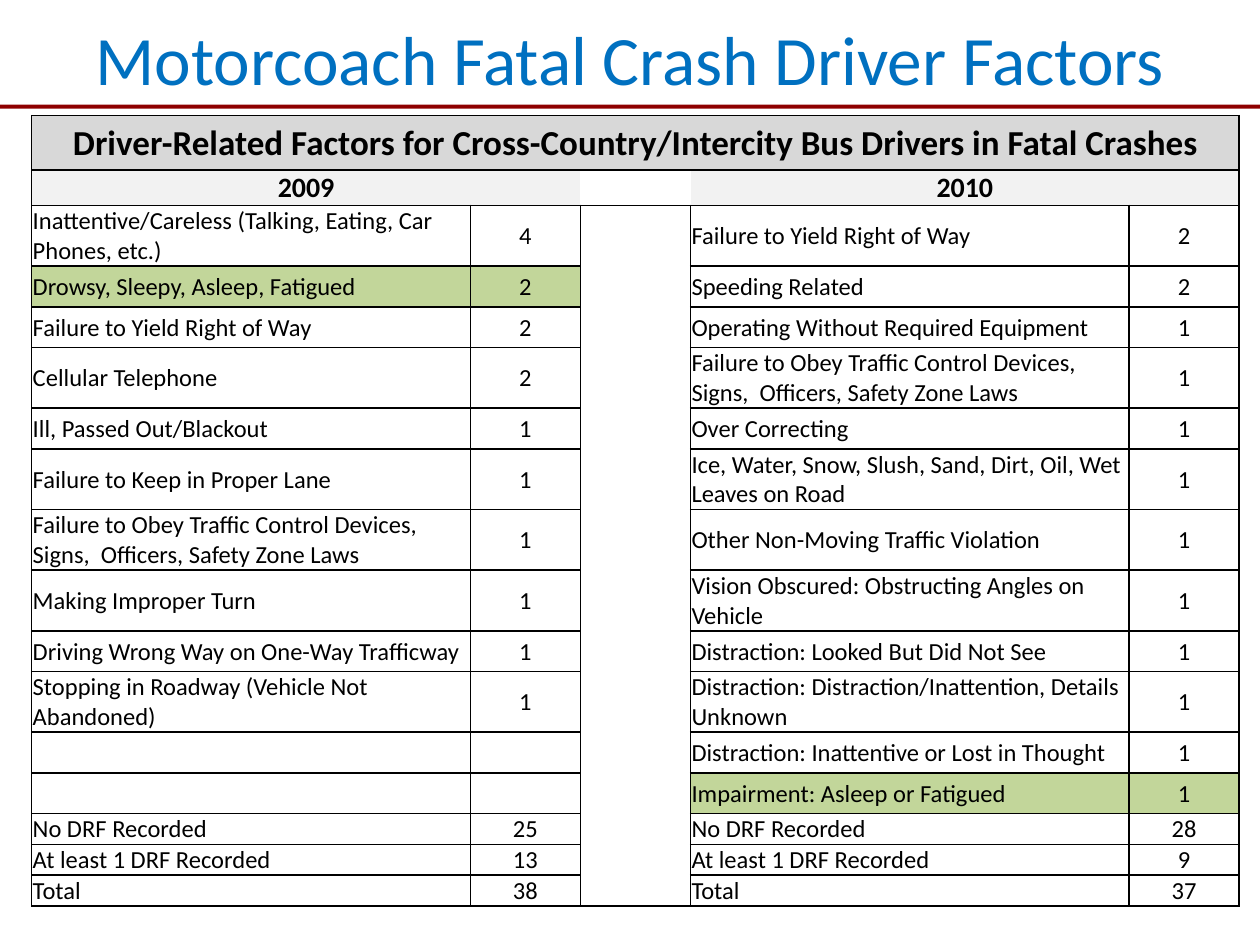
import pptx
import pptx.dml.color
import pptx.enum.shapes
import pptx.enum.text
import pptx.oxml
import pptx.oxml.ns
import pptx.util
import lxml.etree

Cm = pptx.util.Cm
ALIGN = pptx.enum.text.PP_ALIGN
ANCHOR = pptx.enum.text.MSO_ANCHOR

COLOURS = {
    "title": "0070C0",
    "rule": "8E0000",
    "text": "000000",
    "border": "000000",
    "heading": "D8D8D8",
    "year": "F2F2F2",
    "fatigue": "C2D69A",
}

HEADING = "Driver-Related Factors for Cross-Country/Intercity Bus Drivers in Fatal Crashes"
CONTROL_DEVICES = "Failure to Obey Traffic Control Devices,  Signs,  Officers, Safety Zone Laws"
TALL, MEDIUM, SHORT = 1.2, 0.82, 0.61
COLUMN_WIDTHS = [8.84, 2.22, 2.22, 8.84, 2.22]
GAP_COLUMN = 2
FACTORS = [
    (TALL, "Inattentive/Careless (Talking, Eating, Car Phones, etc.)", 4,
     "Failure to Yield Right of Way", 2),
    (MEDIUM, "Drowsy, Sleepy, Asleep, Fatigued", 2, "Speeding Related", 2),
    (MEDIUM, "Failure to Yield Right of Way", 2, "Operating Without Required Equipment", 1),
    (TALL, "Cellular Telephone", 2, CONTROL_DEVICES, 1),
    (MEDIUM, "Ill, Passed Out/Blackout", 1, "Over Correcting", 1),
    (TALL, "Failure to Keep in Proper Lane", 1,
     "Ice, Water, Snow, Slush, Sand, Dirt, Oil, Wet Leaves on Road", 1),
    (TALL, CONTROL_DEVICES, 1, "Other Non-Moving Traffic Violation", 1),
    (TALL, "Making Improper Turn", 1, "Vision Obscured: Obstructing Angles on Vehicle", 1),
    (MEDIUM, "Driving Wrong Way on One-Way Trafficway", 1,
     "Distraction: Looked But Did Not See", 1),
    (TALL, "Stopping in Roadway (Vehicle Not Abandoned)", 1,
     "Distraction: Distraction/Inattention, Details Unknown", 1),
    (MEDIUM, "", "", "Distraction: Inattentive or Lost in Thought", 1),
    (MEDIUM, "", "", "Impairment: Asleep or Fatigued", 1),
    (SHORT, "No DRF Recorded", 25, "No DRF Recorded", 28),
    (SHORT, "At least 1 DRF Recorded", 13, "At least 1 DRF Recorded", 9),
    (SHORT, "Total", 38, "Total", 37),
]
FATIGUE_LABELS = {"Drowsy, Sleepy, Asleep, Fatigued", "Impairment: Asleep or Fatigued"}


def colour(name):
    return pptx.dml.color.RGBColor.from_string(COLOURS[name])


def write(frame, text, size=14, ink="text", bold=False, align=ALIGN.LEFT, font="Calibri"):
    para = frame.paragraphs[0]
    para.alignment = align
    para.font.size = pptx.util.Pt(size)
    if text:
        span = para.add_run()
        span.text = text
        span.font.name = font
        span.font.size = pptx.util.Pt(size)
        span.font.bold = bold
        span.font.color.rgb = colour(ink)


class SlideBuilder:
    def __init__(self, deck):
        self.page = deck.slides.add_slide(deck.slide_layouts[5])

    def title(self, text, left, top, width, height):
        box = self.page.shapes.title
        box.left, box.top, box.width, box.height = Cm(left), Cm(top), Cm(width), Cm(height)
        box.text_frame.auto_size = pptx.enum.text.MSO_AUTO_SIZE.NONE
        box.text_frame.vertical_anchor = ANCHOR.MIDDLE
        write(box.text_frame, text, size=39.6, ink="title", align=ALIGN.CENTER)

    def rule(self, left, top, width, height):
        bar = self.page.shapes.add_shape(
            pptx.enum.shapes.MSO_SHAPE.RECTANGLE, Cm(left), Cm(top), Cm(width), Cm(height))
        bar.shadow.inherit = False
        bar.fill.solid()
        bar.fill.fore_color.rgb = colour("rule")
        bar.line.fill.background()

    def table(self, left, top, widths, heights):
        grid = self.page.shapes.add_table(
            len(heights), len(widths), Cm(left), Cm(top), Cm(sum(widths)), Cm(sum(heights))).table
        grid.first_row = False
        grid.horz_banding = False
        for column, width in zip(grid.columns, widths):
            column.width = Cm(width)
        for row, height in zip(grid.rows, heights):
            row.height = Cm(height)
        return grid

    def borders(self, cell, sides):
        properties = cell._tc.get_or_add_tcPr()
        for side in "LRTB":
            line = lxml.etree.SubElement(properties, pptx.oxml.ns.qn("a:ln" + side))
            if side in sides:
                line.set("w", str(pptx.util.Pt(1)))
                fill = lxml.etree.SubElement(line, pptx.oxml.ns.qn("a:solidFill"))
                ink = lxml.etree.SubElement(fill, pptx.oxml.ns.qn("a:srgbClr"))
                ink.set("val", COLOURS["border"])
            else:
                line.set("w", "0")
                lxml.etree.SubElement(line, pptx.oxml.ns.qn("a:noFill"))

    def cell(self, cell, text="", sides="LRTB", fill=None, anchor=ANCHOR.MIDDLE, **style):
        self.borders(cell, sides)
        cell.margin_left = cell.margin_right = cell.margin_top = Cm(0.02)
        cell.margin_bottom = 0
        cell.vertical_anchor = anchor
        if fill:
            cell.fill.solid()
            cell.fill.fore_color.rgb = colour(fill)
        else:
            cell.fill.background()
        write(cell.text_frame, text, **style)

    def heading_rows(self, grid):
        last = len(COLUMN_WIDTHS) - 1
        grid.cell(0, 0).merge(grid.cell(0, last))
        self.cell(grid.cell(0, 0), HEADING, fill="heading", size=20, bold=True,
                  align=ALIGN.CENTER)
        for column in range(1, last + 1):
            self.cell(grid.cell(0, column), fill="heading")
        for first, year, sides in ((0, "2009", "LTB"), (3, "2010", "RTB")):
            grid.cell(1, first).merge(grid.cell(1, first + 1))
            self.cell(grid.cell(1, first), year, sides, "year", ANCHOR.BOTTOM,
                      size=16, bold=True, align=ALIGN.CENTER)
            self.cell(grid.cell(1, first + 1), "", sides, "year")
        self.cell(grid.cell(1, GAP_COLUMN), sides="TB")

    def factor_rows(self, grid):
        for index, (height, *entries) in enumerate(FACTORS):
            row = index + 2
            anchor = ANCHOR.BOTTOM if height == SHORT else ANCHOR.MIDDLE
            for first, label, count in ((0, *entries[:2]), (3, *entries[2:])):
                fill = "fatigue" if label in FATIGUE_LABELS else None
                self.cell(grid.cell(row, first), label, fill=fill, anchor=anchor)
                self.cell(grid.cell(row, first + 1), str(count), fill=fill,
                          anchor=anchor if first else ANCHOR.MIDDLE, align=ALIGN.CENTER)
            top = "T" if index == 0 else ""
            bottom = "B" if index == len(FACTORS) - 1 else ""
            self.cell(grid.cell(row, GAP_COLUMN), sides="LR" + top + bottom)


def main():
    deck = pptx.Presentation()
    deck.slide_width, deck.slide_height = Cm(25.4), Cm(19.05)
    builder = SlideBuilder(deck)
    builder.rule(-0.02, 2.11, 25.43, 0.08)
    builder.title("Motorcoach Fatal Crash Driver Factors", 1.27, 0, 22.86, 2.33)
    heights = [1.1, 0.7] + [factor[0] for factor in FACTORS]
    grid = builder.table(0.64, 2.33, COLUMN_WIDTHS, heights)
    builder.heading_rows(grid)
    builder.factor_rows(grid)
    deck.save("out.pptx")


if __name__ == "__main__":
    main()
